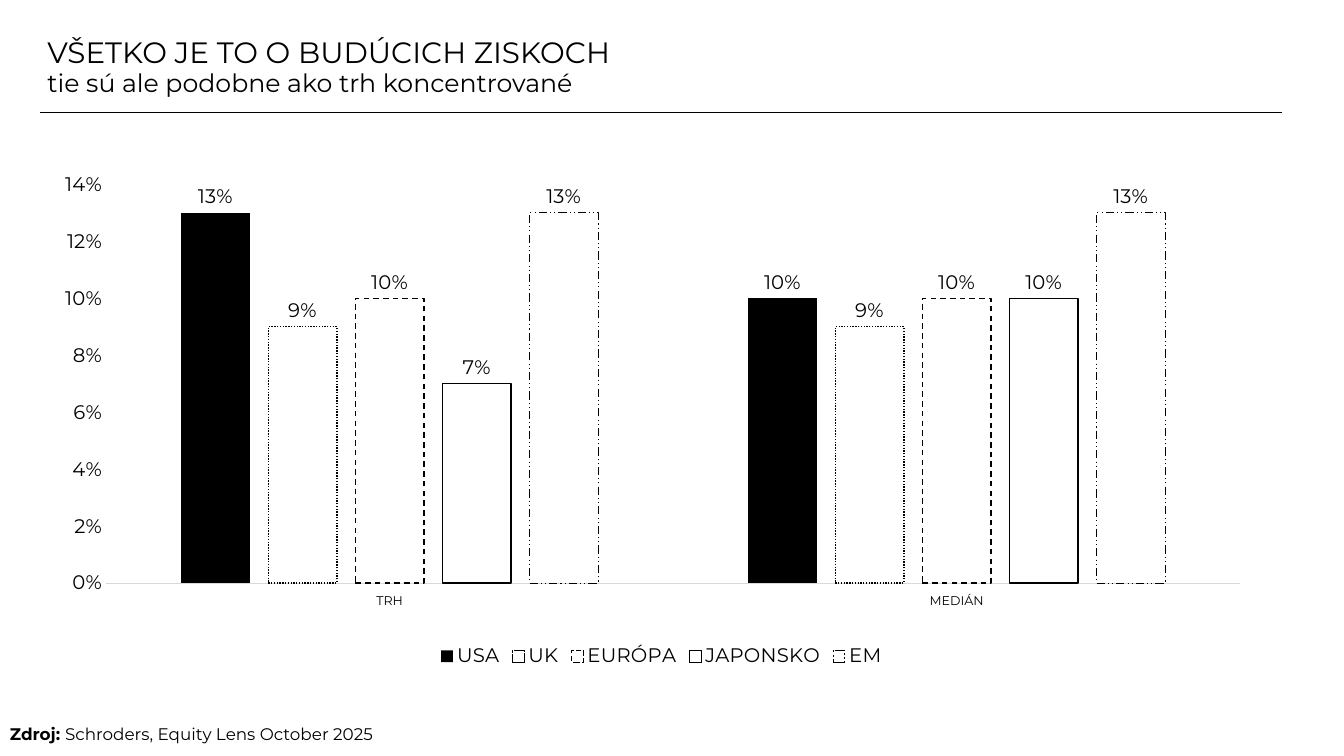
from lxml import etree
from pptx import Presentation
from pptx.chart.data import CategoryChartData
from pptx.dml.color import RGBColor
from pptx.enum.chart import (XL_CHART_TYPE, XL_LABEL_POSITION,
                             XL_LEGEND_POSITION, XL_TICK_LABEL_POSITION,
                             XL_TICK_MARK)
from pptx.enum.dml import MSO_LINE
from pptx.enum.shapes import MSO_CONNECTOR
from pptx.enum.text import MSO_ANCHOR, MSO_AUTO_SIZE, PP_ALIGN
from pptx.oxml.ns import qn
from pptx.util import Inches, Pt

BLACK = RGBColor(0x00, 0x00, 0x00)
GREY = RGBColor(0xD9, 0xD9, 0xD9)
FACE = "Montserrat"
PCT = "0%"
COLUMN = XL_CHART_TYPE.COLUMN_CLUSTERED
OUT_END = XL_LABEL_POSITION.OUTSIDE_END
BOTTOM = XL_LEGEND_POSITION.BOTTOM
LOW = XL_TICK_LABEL_POSITION.LOW
NO_TICK = XL_TICK_MARK.NONE
DOT, DASH, SOLID = MSO_LINE.ROUND_DOT, MSO_LINE.DASH, MSO_LINE.SOLID
DASH_DOT = MSO_LINE.DASH_DOT_DOT

WIDE, HIGH = Inches(13.33), Inches(7.5)
LEFT, SPAN = Inches(0.4), Inches(12.32)

# Name, values, outline width and dash (no outline means a solid fill)
MARKETS = [
    ("USA", (0.13, 0.10), None, None),
    ("UK", (0.09, 0.09), 1, DOT),
    ("EURÓPA", (0.10, 0.10), 1, DASH),
    ("JAPONSKO", (0.07, 0.10), 1, SOLID),
    ("EM", (0.13, 0.13), 0.75, DASH_DOT),
]
PLOT = {"x": 0.053, "y": 0.047, "w": 0.913, "h": 0.779}


def set_font(font, size, bold=False):
    font.name, font.size, font.bold = FACE, Pt(size), bold
    font.color.rgb = BLACK


def add_head(slide, left, top, width, height):
    # Title and subtitle
    title = slide.shapes.title
    title.left, title.top, title.width, title.height = left, top, width, height
    frame = title.text_frame
    frame.text = ("VŠETKO JE TO O BUDÚCICH ZISKOCH\n"
                  "tie sú ale podobne ako trh koncentrované")
    frame.auto_size = MSO_AUTO_SIZE.NONE
    frame.word_wrap = True
    frame.vertical_anchor = MSO_ANCHOR.MIDDLE
    frame.margin_left = frame.margin_right = Inches(0.07)
    frame.margin_top = frame.margin_bottom = Inches(0.04)
    for para, size in zip(frame.paragraphs, (21, 18)):
        para.alignment = PP_ALIGN.LEFT
        para.line_spacing = 0.9
        para.space_before = Pt(0)
        set_font(para.runs[0].font, size)

    # Rule below the title
    level = top + height + Inches(0.07)
    rule = slide.shapes.add_connector(
        MSO_CONNECTOR.STRAIGHT, left, level, left + width, level)
    rule.line.color.rgb = BLACK
    rule.line.width = Pt(0.5)
    etree.SubElement(rule._element.spPr, qn("a:effectLst"))


def place_plot(chart):
    area = chart._chartSpace.chart.plotArea
    for old in area.findall(qn("c:layout")):
        area.remove(old)
    layout = etree.Element(qn("c:layout"))
    manual = etree.SubElement(layout, qn("c:manualLayout"))
    parts = [("layoutTarget", "inner"), ("xMode", "edge"), ("yMode", "edge")]
    for tag, value in parts + list(PLOT.items()):
        etree.SubElement(manual, qn("c:" + tag)).set("val", str(value))
    area.insert(0, layout)


def style_axes(chart):
    cats, vals = chart.category_axis, chart.value_axis
    for axis, size in ((cats, 9), (vals, 14)):
        axis.major_tick_mark = axis.minor_tick_mark = NO_TICK
        axis.has_major_gridlines = False
        set_font(axis.tick_labels.font, size)
    cats.tick_label_position = LOW
    cats.format.line.color.rgb = GREY
    cats.format.line.width = Pt(0.75)
    vals.format.line.fill.background()
    vals.minimum_scale, vals.maximum_scale = 0, 0.14
    vals.major_unit = 0.02
    vals.tick_labels.number_format = PCT
    vals.tick_labels.number_format_is_linked = False


def style_bars(series, width, dash):
    series.invert_if_negative = False
    form = series.format
    if width is None:
        form.fill.solid()
        form.fill.fore_color.rgb = BLACK
        form.line.fill.background()
    else:
        form.fill.background()
        form.line.color.rgb = BLACK
        form.line.width = Pt(width)
        form.line.dash_style = dash
    labels = series.data_labels
    labels.show_value = True
    labels.position = OUT_END
    labels.number_format = PCT
    labels.number_format_is_linked = False
    set_font(labels.font, 14)


def add_bars(slide, left, top, width, height):
    data = CategoryChartData(number_format=PCT)
    data.categories = ["TRH", "MEDIÁN"]
    for name, values, _, _ in MARKETS:
        data.add_series(name, values)
    chart = slide.shapes.add_chart(
        COLUMN, left, top, width, height, data).chart
    chart.has_title = False
    set_font(chart.font, 10)
    plot = chart.plots[0]
    plot.vary_by_categories = False
    plot.gap_width, plot.overlap = 219, -27
    for series, (_, _, weight, dash) in zip(plot.series, MARKETS):
        style_bars(series, weight, dash)
    style_axes(chart)
    place_plot(chart)

    # Legend
    chart.has_legend = True
    chart.legend.position = BOTTOM
    chart.legend.include_in_layout = False
    set_font(chart.legend.font, 14)


def add_credit(slide, left, top, width, height):
    frame = slide.shapes.add_textbox(left, top, width, height).text_frame
    frame.word_wrap = True
    para = frame.paragraphs[0]
    para.alignment = PP_ALIGN.JUSTIFY
    for text, bold in (("Zdroj: ", True),
                       ("Schroders, Equity Lens October 2025", False)):
        run = para.add_run()
        run.text = text
        set_font(run.font, 12, bold)


def main():
    deck = Presentation()
    deck.slide_width, deck.slide_height = WIDE, HIGH
    slide = deck.slides.add_slide(deck.slide_layouts[5])
    add_head(slide, LEFT, Inches(0.31), SPAN, Inches(0.73))
    add_bars(slide, LEFT, Inches(1.59), SPAN, Inches(5.08))
    add_credit(slide, 0, Inches(7.13), Inches(8.62), Inches(0.3))
    deck.save("out.pptx")


if __name__ == "__main__":
    main()
